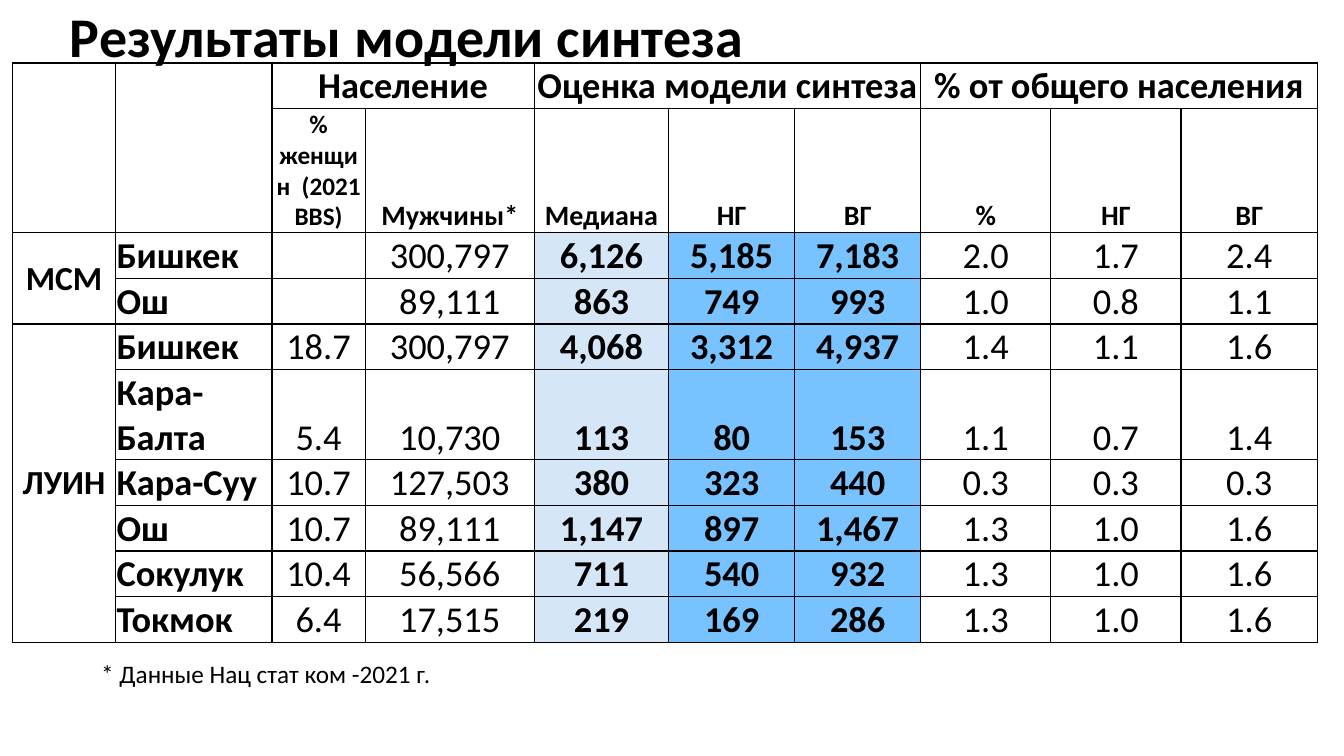
from lxml.etree import SubElement
from pptx import Presentation
from pptx.dml.color import RGBColor
from pptx.enum.text import MSO_ANCHOR, MSO_AUTO_SIZE, PP_ALIGN
from pptx.oxml.ns import qn
from pptx.util import Emu, Pt

BLACK = RGBColor(0x00, 0x00, 0x00)
PALE_BLUE = RGBColor(0xD5, 0xE6, 0xF7)
SKY_BLUE = RGBColor(0x77, 0xC2, 0xFF)

COLUMN_WIDTHS = [98, 149, 89, 161, 128, 120, 120, 124, 124, 130]
ROW_HEIGHTS = [42, 118, 42, 42, 42, 86, 42, 42, 42, 42]
ESTIMATE_FILLS = {4: PALE_BLUE, 5: SKY_BLUE, 6: SKY_BLUE}
HEADER_ROWS = 2
CITY_COLUMN = 1

RESULTS = [
    ["", "", "Население", "", "Оценка модели синтеза", "", "", "% от общего населения", "", ""],
    ["", "", "% женщин  (2021 BBS)", "Мужчины*", "Медиана", "НГ", "ВГ", "%", "НГ", "ВГ"],
    ["МСМ", "Бишкек", "", "300,797", "6,126", "5,185", "7,183", "2.0", "1.7", "2.4"],
    ["", "Ош", "", "89,111", "863", "749", "993", "1.0", "0.8", "1.1"],
    ["ЛУИН", "Бишкек", "18.7", "300,797", "4,068", "3,312", "4,937", "1.4", "1.1", "1.6"],
    ["", "Кара-Балта", "5.4", "10,730", "113", "80", "153", "1.1", "0.7", "1.4"],
    ["", "Кара-Суу", "10.7", "127,503", "380", "323", "440", "0.3", "0.3", "0.3"],
    ["", "Ош", "10.7", "89,111", "1,147", "897", "1,467", "1.3", "1.0", "1.6"],
    ["", "Сокулук", "10.4", "56,566", "711", "540", "932", "1.3", "1.0", "1.6"],
    ["", "Токмок", "6.4", "17,515", "219", "169", "286", "1.3", "1.0", "1.6"],
]
MERGES = [
    (0, 0, 1, 0), (0, 1, 1, 1), (0, 2, 0, 3), (0, 4, 0, 6), (0, 7, 0, 9),
    (2, 0, 3, 0), (4, 0, 9, 0),
]


def px(length):
    return Emu(length * 9525)


def apply(target, values):
    for name, value in values.items():
        setattr(target, name, value)


class ResultsSlide:
    font_name = "Calibri"
    color = BLACK

    def __init__(self, presentation):
        self.slide = presentation.slides.add_slide(presentation.slide_layouts[5])

    def add_text(self, frame, text, size, bold=False, align=PP_ALIGN.LEFT):
        paragraph = frame.paragraphs[0]
        paragraph.alignment = align
        run = paragraph.add_run()
        run.text = text
        apply(run.font, {"name": self.font_name, "size": Pt(size), "bold": bold})
        run.font.color.rgb = self.color
        return paragraph

    def title(self, text, left, top, width, height):
        heading = self.slide.shapes.title
        apply(heading, {"left": px(left), "top": px(top),
                        "width": px(width), "height": px(height)})
        apply(heading.text_frame, {"auto_size": MSO_AUTO_SIZE.NONE,
                                   "vertical_anchor": MSO_ANCHOR.MIDDLE})
        self.add_text(heading.text_frame, text, 40, bold=True).line_spacing = 0.9

    def footnote(self, text, left, top, width, height):
        note = self.slide.shapes.add_textbox(px(left), px(top), px(width), px(height))
        apply(note.text_frame, {"word_wrap": False,
                                "auto_size": MSO_AUTO_SIZE.SHAPE_TO_FIT_TEXT})
        self.add_text(note.text_frame, text, 18)

    def borders(self, cell):
        properties = cell._tc.get_or_add_tcPr()
        for side in ("a:lnL", "a:lnR", "a:lnT", "a:lnB"):
            line = SubElement(properties, qn(side), w=str(Pt(1)))
            fill = SubElement(line, qn("a:solidFill"))
            SubElement(fill, qn("a:srgbClr"), val=str(self.color))

    def cell(self, cell, text, row, column):
        is_header = row < HEADER_ROWS
        is_group = column == 0
        apply(cell, {"margin_left": px(1), "margin_right": px(1),
                     "margin_top": px(1), "margin_bottom": 0,
                     "vertical_anchor": MSO_ANCHOR.MIDDLE if is_group else MSO_ANCHOR.BOTTOM})
        self.borders(cell)
        if column in ESTIMATE_FILLS and not is_header:
            cell.fill.solid()
            cell.fill.fore_color.rgb = ESTIMATE_FILLS[column]
        else:
            cell.fill.background()
        if not text:
            return
        size = 24 if is_group else 26
        if row == 1:
            size = 18 if column == 2 else 20
        bold = is_header or column <= CITY_COLUMN or column in ESTIMATE_FILLS
        align = PP_ALIGN.LEFT if column == CITY_COLUMN else PP_ALIGN.CENTER
        self.add_text(cell.text_frame, text, size, bold, align)

    def table(self, rows, left, top):
        frame = self.slide.shapes.add_table(
            len(rows), len(COLUMN_WIDTHS), px(left), px(top),
            px(sum(COLUMN_WIDTHS)), px(sum(ROW_HEIGHTS)))
        table = frame.table
        apply(table, {"first_row": False, "horz_banding": False})
        for column, width in zip(table.columns, COLUMN_WIDTHS):
            column.width = px(width)
        for row, height in zip(table.rows, ROW_HEIGHTS):
            row.height = px(height)
        for row, texts in enumerate(rows):
            for column, text in enumerate(texts):
                self.cell(table.cell(row, column), text, row, column)
        for top_row, first, bottom_row, last in MERGES:
            table.cell(top_row, first).merge(table.cell(bottom_row, last))


def main():
    presentation = Presentation()
    apply(presentation, {"slide_width": px(1280), "slide_height": px(720)})
    results = ResultsSlide(presentation)
    results.title("Результаты модели синтеза", 57, -32, 1104, 139)
    results.table(RESULTS, 12, 60)
    results.footnote("* Данные Нац стат ком -2021 г.", 87, 622, 337, 38)
    presentation.save("out.pptx")


if __name__ == "__main__":
    main()
